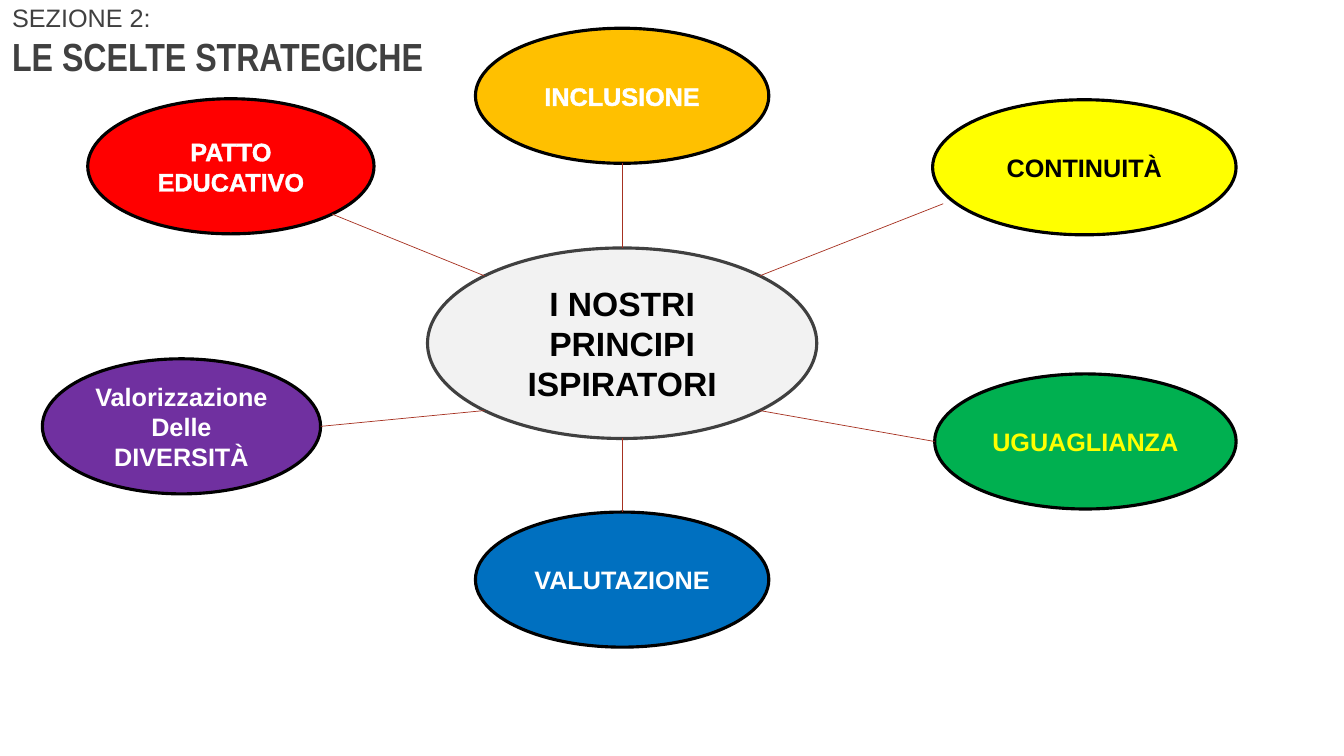
from math import sqrt

from lxml import etree
from pptx import Presentation
from pptx import util as u
from pptx.dml.color import RGBColor
from pptx.enum import shapes, text
from pptx.oxml import parse_xml
from pptx.oxml.ns import nsdecls, qn

WHITE = RGBColor(0xFF, 0xFF, 0xFF)
BLACK = RGBColor(0, 0, 0)
GREY = RGBColor(0x40, 0x40, 0x40)
PALE = RGBColor(0xF2, 0xF2, 0xF2)
RED = RGBColor(0xFF, 0, 0)
PURPLE = RGBColor(0x70, 0x30, 0xA0)
BLUE = RGBColor(0, 0x70, 0xC0)
AMBER = RGBColor(0xFF, 0xC0, 0)
GREEN = RGBColor(0, 0xB0, 0x50)
YELLOW = RGBColor(0xFF, 0xFF, 0)
RUST = RGBColor(0xA6, 0x31, 0x21)

DIAG = sqrt(0.5)
HUB = (46.29, 45.4, 28.96, 25.2)  # centre x, centre y, width, height in percent
HIGH = 17.87  # height of every outer oval

# label, centre x, centre y, width, fill, ink, outlined, spoke from hub, spoke to oval
IDEAS = [
    ("PATTO EDUCATIVO", 17.18, 22, 21.3, RED, WHITE, True,
     (-DIAG, -DIAG), (DIAG, DIAG)),
    ("Valorizzazione\nDelle\nDIVERSITÀ", 13.5, 56.4, 20.7, PURPLE, WHITE, False,
     (-DIAG, DIAG), (1, 0)),
    ("VALUTAZIONE", 46.29, 76.67, 21.83, BLUE, WHITE, False,
     (0, 1), (0, -1)),
    ("INCLUSIONE", 46.29, 12.67, 21.83, AMBER, WHITE, True,
     (0, -1), (0, 1)),
    ("UGUAGLIANZA", 80.76, 58.4, 22.43, GREEN, YELLOW, False,
     (DIAG, DIAG), (-1, 0)),
    ("CONTINUITÀ", 80.68, 22.13, 22.58, YELLOW, BLACK, False,
     (DIAG, -DIAG), (-0.93, 0.54)),
]


def write(par, words, size=18, font="Arial", ink=BLACK, bold=False,
          align=text.PP_ALIGN.CENTER, outline=False):
    par.alignment = align
    run = par.add_run()
    run.text = words
    face = run.font
    face.size, face.name, face.bold = u.Pt(size), font, bold
    face.color.rgb = ink
    if outline:
        run._r.get_or_add_rPr().insert(0, parse_xml(
            f'<a:ln {nsdecls("a")} w="9525"><a:solidFill>'
            f'<a:srgbClr val="{ink}"/></a:solidFill></a:ln>'))


class Board:
    """Places elements by percent of the slide's width and height."""

    def __init__(self, deck):
        self.wide, self.high = deck.slide_width, deck.slide_height
        self.slide = deck.slides.add_slide(deck.slide_layouts[5])

    def x(self, share):
        return round(self.wide * share / 100)

    def y(self, share):
        return round(self.high * share / 100)

    def title(self, lines, w, h):
        box = self.slide.shapes.title
        box.left, box.top, box.width, box.height = 0, 0, self.x(w), self.y(h)
        frame = box.text_frame
        frame.word_wrap = True
        frame.auto_size = text.MSO_AUTO_SIZE.NONE
        frame.vertical_anchor = text.MSO_ANCHOR.TOP
        frame.margin_left, frame.margin_top = u.Inches(0.12), u.Inches(0.02)
        for i, (words, style) in enumerate(lines):
            par = frame.add_paragraph() if i else frame.paragraphs[0]
            write(par, words, ink=GREY, align=text.PP_ALIGN.LEFT, **style)

    def oval(self, words, place, fill, edge=BLACK, **style):
        cx, cy, w, h = place
        oval = self.slide.shapes.add_shape(
            shapes.MSO_SHAPE.OVAL, self.x(cx - w / 2), self.y(cy - h / 2),
            self.x(w), self.y(h))
        oval.shadow.inherit = False
        oval.fill.solid()
        oval.fill.fore_color.rgb = fill
        oval.line.color.rgb = edge
        oval.line.width = u.Pt(2.25)
        frame = oval.text_frame
        frame.word_wrap = True
        frame.vertical_anchor = text.MSO_ANCHOR.MIDDLE
        for i, line in enumerate(words.split("\n")):
            par = frame.add_paragraph() if i else frame.paragraphs[0]
            write(par, line, bold=True, **style)

    def spot(self, place, way):
        cx, cy, w, h = place
        return self.x(cx + way[0] * w / 2), self.y(cy + way[1] * h / 2)

    def spoke(self, start, end):
        line = self.slide.shapes.add_connector(
            shapes.MSO_CONNECTOR.STRAIGHT, *start, *end)
        line.line.color.rgb = RUST
        line.line.width = u.Pt(0.5)
        etree.SubElement(line._element.spPr, qn("a:effectLst"))


def main():
    deck = Presentation()
    deck.slide_width, deck.slide_height = u.Inches(13.33), u.Inches(7.5)
    board = Board(deck)

    # Heading
    board.title([("SEZIONE 2:", {}),
                 ("LE SCELTE STRATEGICHE",
                  {"size": 28, "font": "Arial Narrow", "bold": True})], 47, 11.3)

    # Hub and the principles around it
    board.oval("I NOSTRI PRINCIPI ISPIRATORI", HUB, PALE, edge=GREY, size=24)
    for words, cx, cy, w, fill, ink, outline, out, into in IDEAS:
        place = (cx, cy, w, HIGH)
        board.oval(words, place, fill, ink=ink, outline=outline)
        board.spoke(board.spot(HUB, out), board.spot(place, into))

    deck.save("out.pptx")


if __name__ == "__main__":
    main()
